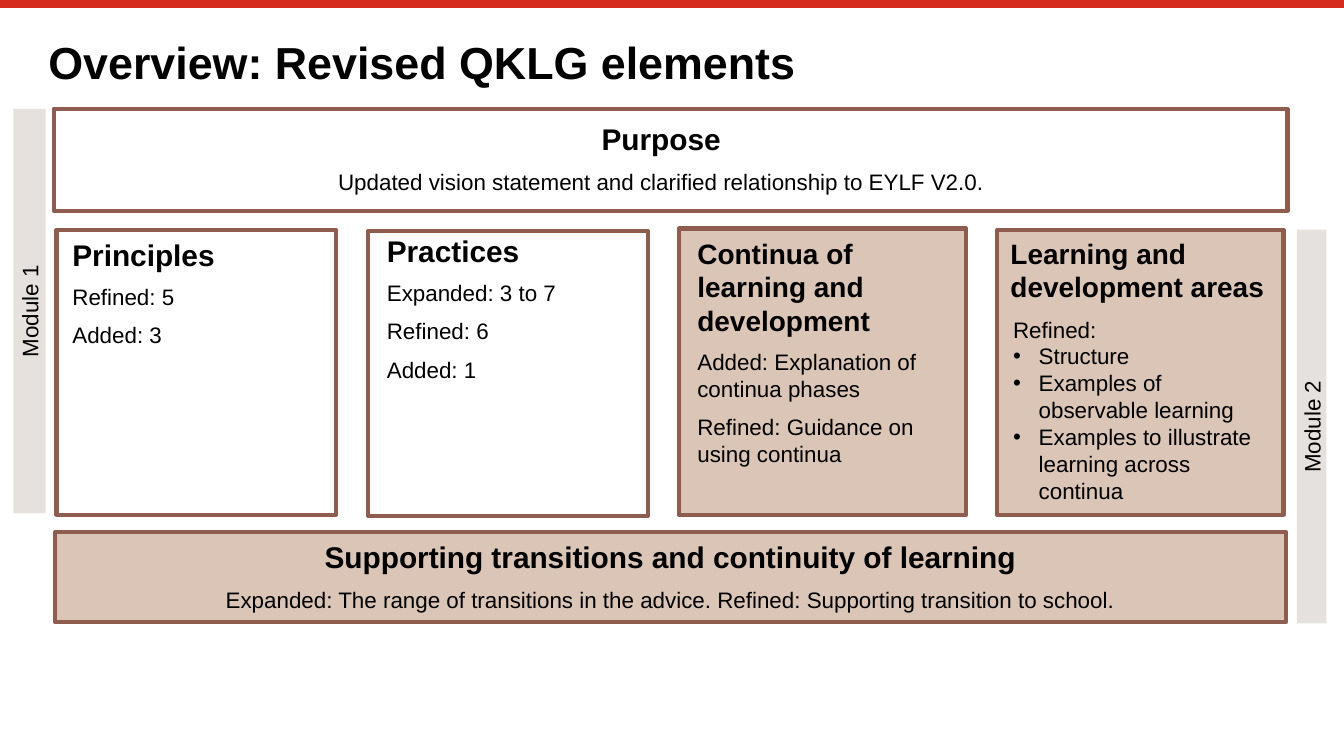
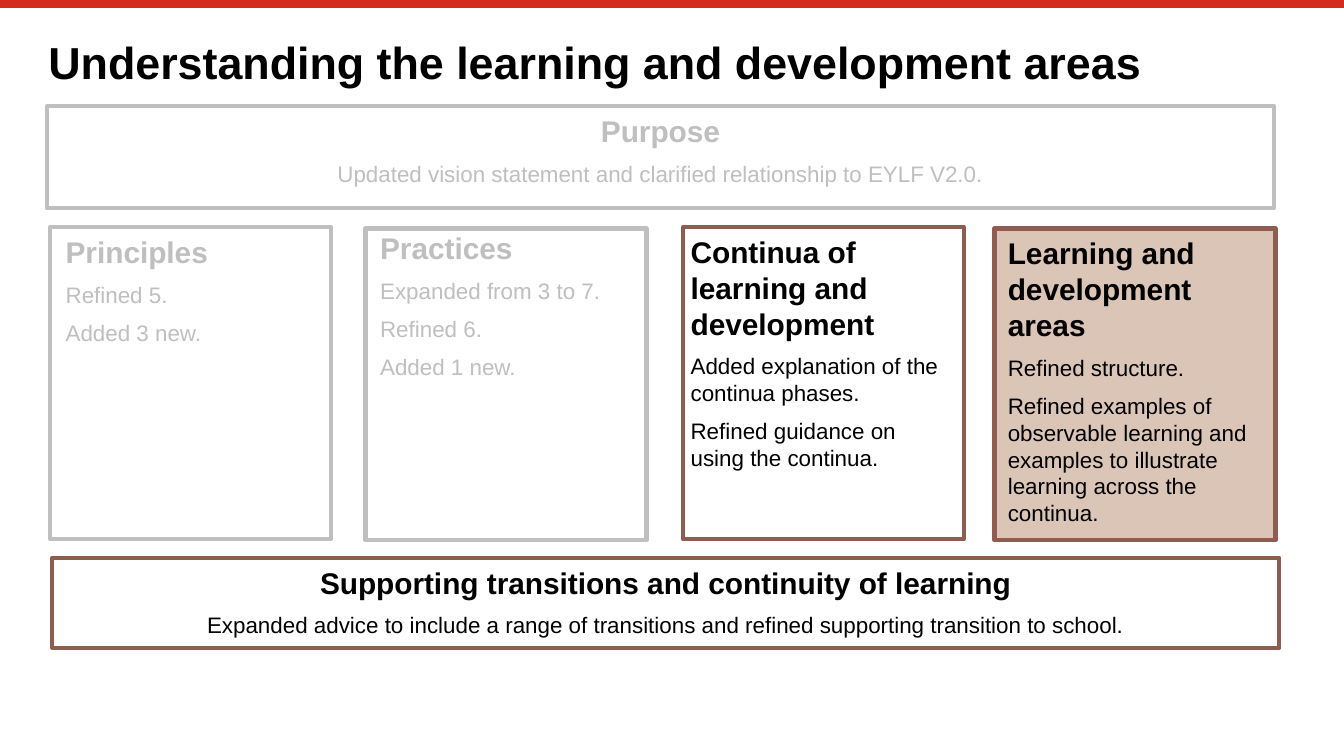
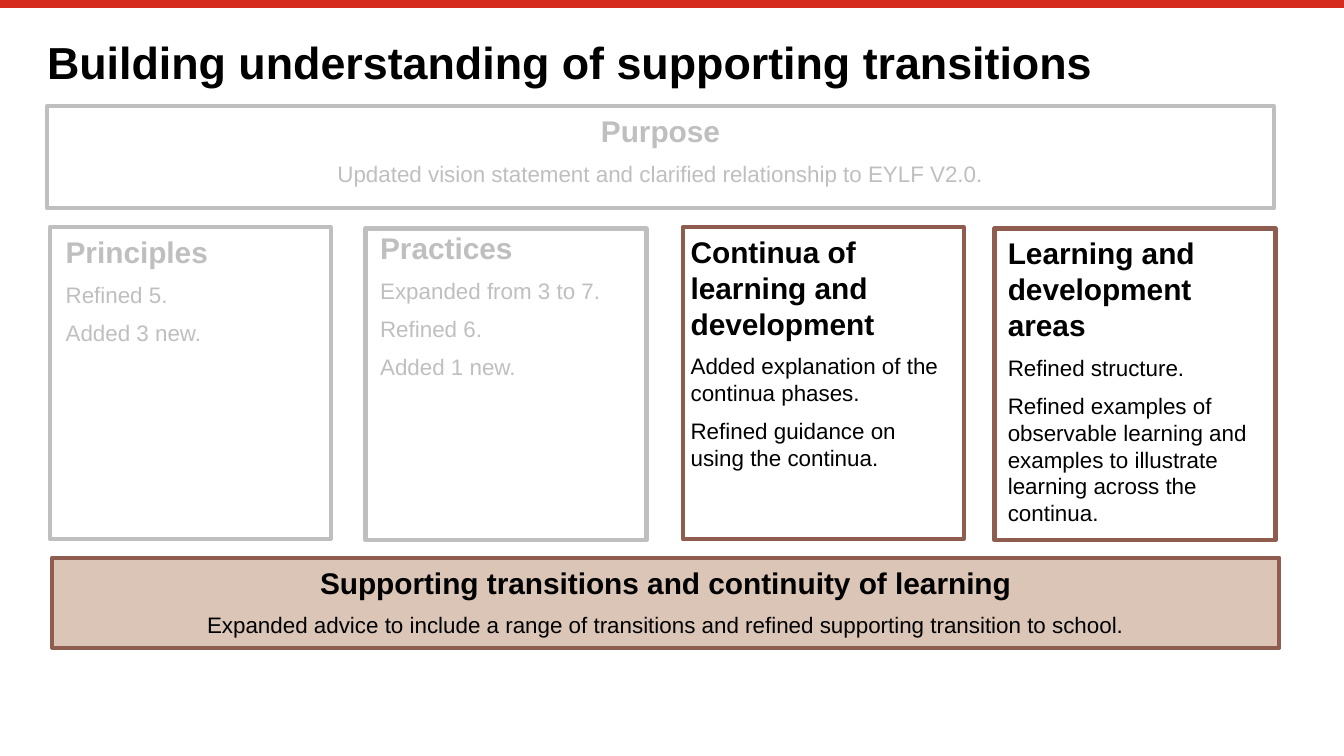
from dataclasses import dataclass, replace
from typing import NamedTuple

from lxml.etree import SubElement
from pptx import Presentation
from pptx.dml.color import RGBColor
from pptx.enum.shapes import MSO_CONNECTOR, MSO_SHAPE
from pptx.enum.text import MSO_ANCHOR, PP_ALIGN
from pptx.oxml.ns import qn
from pptx.presentation import Presentation as Deck
from pptx.shapes.autoshape import Shape
from pptx.slide import Slide
from pptx.text.text import TextFrame, _Paragraph
from pptx.util import Inches, Pt


@dataclass(frozen=True)
class Theme:
    font: str = "Arial"
    ink: str = "000000"
    muted: str = "BFBFBF"
    border: str = "8E5D4F"
    highlight: str = "DAC5B7"
    module: str = "E7E1DE"
    band: str = "D52B1E"
    title_size: float = 24
    heading_size: float = 16
    narrow_heading_size: float = 15
    body_size: float = 12
    paragraph_gap: float = 6
    border_width: float = 2.25
    band_width: float = 4.2


THEME = Theme()


class Box(NamedTuple):
    left: float
    top: float
    width: float
    height: float

    def lengths(self) -> list[Inches]:
        return [Inches(value) for value in self]


@dataclass(frozen=True)
class Panel:
    """A framed element; its text sits in text_area, or in the frame if there is none."""
    heading: str
    details: tuple[str, ...]
    frame: Box
    text_area: Box | None = None
    heading_size: float = THEME.heading_size
    centred: bool = False
    highlighted: bool = False
    muted: bool = False


class Module(NamedTuple):
    label: str
    box: Box


TRANSITIONS = "Supporting transitions and continuity of learning"
AREAS = "Learning and development areas"
CONTINUA = "Continua of learning and development"
VISION = "Updated vision statement and clarified relationship to EYLF V2.0."

OVERVIEW_PANELS = (
    Panel(AREAS, (), Box(7.42, 1.71, 2.13, 2.12),
          heading_size=THEME.narrow_heading_size, highlighted=True),
    Panel(CONTINUA,
          ("Added: Explanation of continua phases", "Refined: Guidance on using continua"),
          Box(5.05, 1.7, 2.14, 2.13), Box(5.09, 1.71, 2.09, 1.87),
          heading_size=THEME.narrow_heading_size, highlighted=True),
    Panel("Practices", ("Expanded: 3 to 7", "Refined: 6", "Added: 1"),
          Box(2.74, 1.72, 2.08, 2.12), Box(2.78, 1.68, 2.09, 1.28)),
    Panel("Principles", ("Refined: 5", "Added: 3"),
          Box(0.42, 1.71, 2.08, 2.12), Box(0.44, 1.71, 2.09, 0.98)),
    Panel("Purpose", (VISION,), Box(0.4, 0.81, 9.18, 0.76),
          Box(0.44, 0.85, 8.96, 0.98), centred=True),
    Panel(TRANSITIONS,
          ("Expanded: The range of transitions in the advice. "
           "Refined: Supporting transition to school.",),
          Box(0.41, 3.96, 9.16, 0.67), centred=True, highlighted=True),
)
REFINED_AREAS = (
    "Structure",
    "Examples of observable learning",
    "Examples to illustrate learning across continua",
)
MODULES = (
    Module("Module 1", Box(0.1, 0.81, 0.24, 3.01)),
    Module("Module 2", Box(9.65, 1.71, 0.22, 2.93)),
)

FOCUS_PANELS = (
    Panel("Purpose", (VISION,), Box(0.35, 0.79, 9.13, 0.76),
          Box(0.35, 0.79, 9.13, 0.98), centred=True, muted=True),
    Panel("Principles", ("Refined 5.", "Added 3 new."),
          Box(0.37, 1.69, 2.09, 2.32), Box(0.39, 1.69, 2.09, 0.98), muted=True),
    Panel("Practices", ("Expanded from 3 to 7.", "Refined 6.", "Added 1 new."),
          Box(2.72, 1.7, 2.09, 2.32), Box(2.73, 1.66, 2.09, 1.28), muted=True),
    Panel(CONTINUA,
          ("Added explanation of the continua phases.",
           "Refined guidance on using the continua."),
          Box(5.08, 1.69, 2.09, 2.32), Box(5.04, 1.69, 2.09, 2.22)),
    Panel(AREAS,
          ("Refined structure.",
           "Refined examples of observable learning and examples to illustrate "
           "learning across the continua."),
          Box(7.4, 1.7, 2.09, 2.32)),
    Panel(TRANSITIONS,
          ("Expanded advice to include a range of transitions and refined "
           "supporting transition to school.",),
          Box(0.39, 4.15, 9.13, 0.67), centred=True),
)


def rgb(colour: str) -> RGBColor:
    return RGBColor.from_string(colour)


def write_paragraph(frame: TextFrame, text: str, size: float, colour: str = THEME.ink,
                    bold: bool = False, align: PP_ALIGN = PP_ALIGN.LEFT,
                    gap: float = 0, bullet: bool = False) -> _Paragraph:
    """Fill the empty first paragraph, or add one with a gap before it."""
    is_first = not frame.text
    paragraph = frame.paragraphs[0] if is_first else frame.add_paragraph()
    paragraph.text = text
    paragraph.alignment = align
    if gap and not is_first:
        paragraph.space_before = Pt(gap)
    if bullet:
        properties = paragraph._p.get_or_add_pPr()
        indent = Inches(0.19)
        properties.set("marL", str(indent))
        properties.set("indent", str(-indent))
        SubElement(properties, qn("a:buFont")).set("typeface", THEME.font)
        SubElement(properties, qn("a:buChar")).set("char", "•")
    font = paragraph.font
    font.name, font.size, font.bold = THEME.font, Pt(size), bold
    font.color.rgb = rgb(colour)
    return paragraph


def add_text_area(slide: Slide, box: Box) -> TextFrame:
    frame = slide.shapes.add_textbox(*box.lengths()).text_frame
    frame.word_wrap = True
    return frame


def add_rectangle(slide: Slide, box: Box, fill: str | None = None,
                  border: str | None = None) -> Shape:
    rectangle = slide.shapes.add_shape(MSO_SHAPE.RECTANGLE, *box.lengths())
    rectangle.shadow.inherit = False
    if fill:
        rectangle.fill.solid()
        rectangle.fill.fore_color.rgb = rgb(fill)
    else:
        rectangle.fill.background()
    if border:
        rectangle.line.color.rgb = rgb(border)
        rectangle.line.width = Pt(THEME.border_width)
    else:
        rectangle.line.fill.background()
    rectangle.text_frame.word_wrap = True
    return rectangle


def add_panel(slide: Slide, panel: Panel) -> None:
    rectangle = add_rectangle(slide, panel.frame,
                              THEME.highlight if panel.highlighted else None,
                              THEME.muted if panel.muted else THEME.border)
    if panel.text_area:
        frame = add_text_area(slide, panel.text_area)
    else:
        frame = rectangle.text_frame
        frame.vertical_anchor = MSO_ANCHOR.TOP
    colour = THEME.muted if panel.muted else THEME.ink
    align = PP_ALIGN.CENTER if panel.centred else PP_ALIGN.LEFT
    write_paragraph(frame, panel.heading, panel.heading_size, colour, True, align)
    for detail in panel.details:
        write_paragraph(frame, detail, THEME.body_size, colour, align=align,
                        gap=THEME.paragraph_gap)


def add_module(slide: Slide, module: Module) -> None:
    frame = add_rectangle(slide, module.box, THEME.module).text_frame
    frame.vertical_anchor = MSO_ANCHOR.MIDDLE
    frame._txBody.bodyPr.set("vert", "vert270")
    write_paragraph(frame, module.label, THEME.body_size, align=PP_ALIGN.CENTER)


def add_refined_areas(slide: Slide) -> None:
    frame = add_text_area(slide, Box(7.44, 2.3, 2.13, 1.82))
    write_paragraph(frame, "Refined:", THEME.body_size)
    for area in REFINED_AREAS:
        write_paragraph(frame, area, THEME.body_size, bullet=True)


def add_titled_slide(deck: Deck, title: str, title_left: float = 0.36) -> Slide:
    """Add a blank slide with the red top band and its title."""
    slide = deck.slides.add_slide(deck.slide_layouts[6])
    band_top = Inches(0.03)
    band = slide.shapes.add_connector(MSO_CONNECTOR.STRAIGHT, 0, band_top,
                                      deck.slide_width, band_top)
    band.line.color.rgb = rgb(THEME.band)
    band.line.width = Pt(THEME.band_width)
    SubElement(band._element.spPr, qn("a:effectLst"))

    frame = add_text_area(slide, Box(title_left, 0.3, 9.29, 0.39))
    frame.margin_left = frame.margin_top = frame.margin_right = frame.margin_bottom = 0
    frame.vertical_anchor = MSO_ANCHOR.TOP
    write_paragraph(frame, title, THEME.title_size, bold=True).line_spacing = 0.9
    return slide


def add_overview_slide(deck: Deck) -> None:
    slide = add_titled_slide(deck, "Overview: Revised QKLG elements")
    for panel in OVERVIEW_PANELS:
        add_panel(slide, panel)
    add_refined_areas(slide)
    for module in MODULES:
        add_module(slide, module)


def add_focus_slide(deck: Deck, title: str, focus: str,
                    title_left: float = 0.36) -> None:
    """Repeat the elements with only the one in focus highlighted."""
    slide = add_titled_slide(deck, title, title_left)
    for panel in FOCUS_PANELS:
        add_panel(slide, replace(panel, highlighted=panel.heading == focus))


def main() -> None:
    deck = Presentation()
    deck.slide_width = Inches(10)
    deck.slide_height = Inches(10 * 9 / 16)
    add_overview_slide(deck)
    add_focus_slide(deck, "Understanding the learning and development areas", AREAS)
    add_focus_slide(deck, "Building understanding of supporting transitions",
                    TRANSITIONS, title_left=0.35)
    deck.save("out.pptx")


if __name__ == "__main__":
    main()
